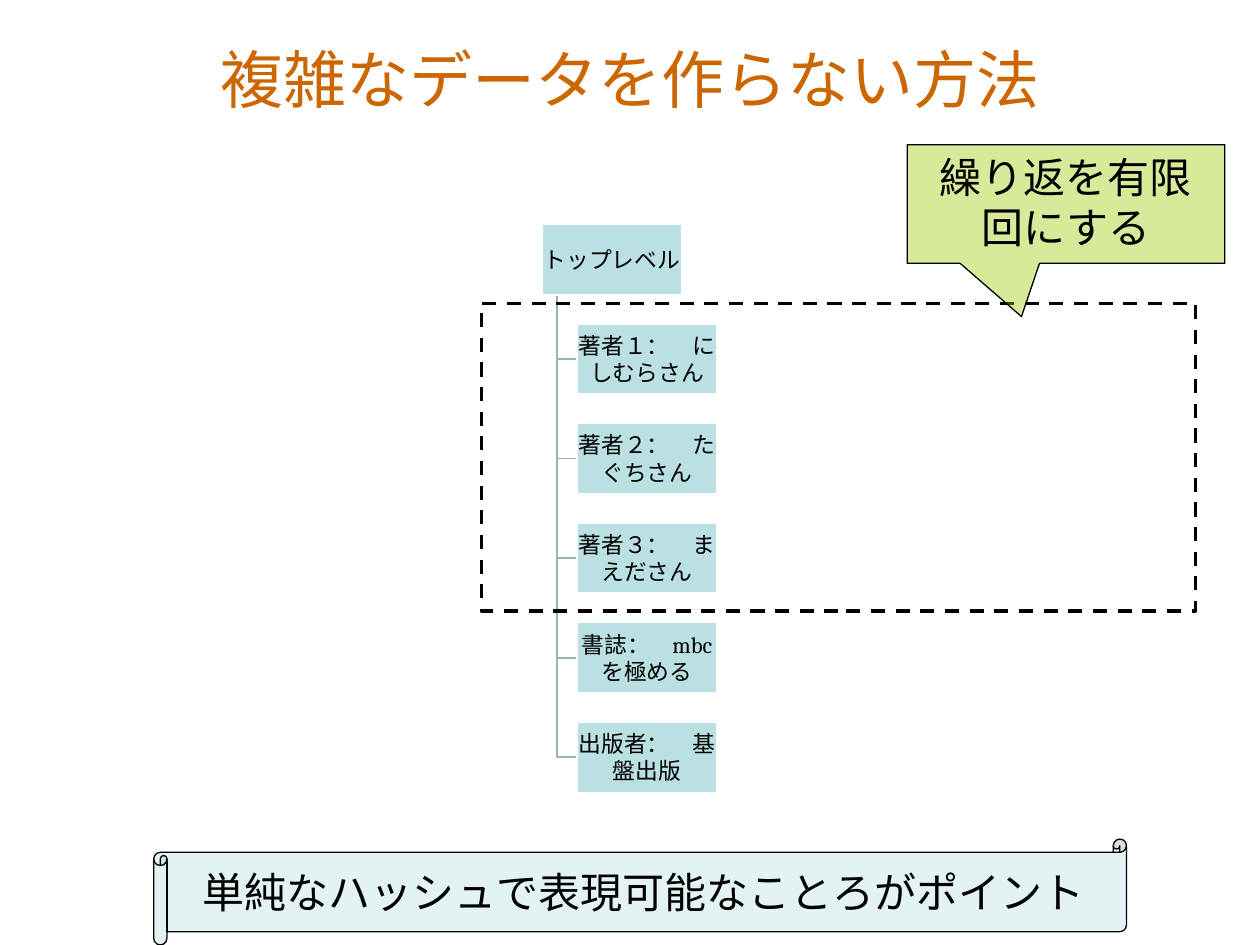
from pptx import Presentation
from pptx.dml.color import RGBColor
from pptx.enum.dml import MSO_LINE
from pptx.enum.shapes import MSO_SHAPE
from pptx.enum.text import MSO_ANCHOR, PP_ALIGN
from pptx.oxml.ns import qn
from pptx.util import Inches, Pt
from lxml import etree

BLACK = RGBColor(0x00, 0x00, 0x00)
WHITE = RGBColor(0xFF, 0xFF, 0xFF)
ORANGE = RGBColor(0xCC, 0x66, 0x00)
AQUA = RGBColor(0xBB, 0xE0, 0xE3)
TEAL = RGBColor(0x96, 0xB3, 0xB6)
LIME = RGBColor(0x99, 0xCC, 0x00)

ROOT = "トップレベル"
CHILDREN = [
    "著者１：　にしむらさん",
    "著者２：　たぐちさん",
    "著者３：　まえださん",
    "書誌：　mbcを極める",
    "出版者：　基盤出版",
]
NODE_WIDTH, NODE_HEIGHT = 1.11, 0.56
NODE_PITCH = 0.79
TRUNK_OFFSET, CHILD_INDENT = 0.12, 0.28


def write_text(shape, text, size, color=BLACK, font="Cambria", anchor=MSO_ANCHOR.MIDDLE):
    frame = shape.text_frame
    frame.text = text
    frame.word_wrap = True
    frame.vertical_anchor = anchor
    paragraph = frame.paragraphs[0]
    paragraph.alignment = PP_ALIGN.CENTER
    paragraph.font.size = Pt(size)
    paragraph.font.name = font
    paragraph.font.color.rgb = color


def add_box(slide, kind, box, fill, line, line_width, opacity=None):
    """Add a preset shape; opacity is a percentage, and a fill of None is empty."""
    shape = slide.shapes.add_shape(kind, *map(Inches, box))
    shape.shadow.inherit = False
    shape.line.color.rgb = line
    shape.line.width = Pt(line_width)
    if fill is None:
        shape.fill.background()
    else:
        shape.fill.solid()
        shape.fill.fore_color.rgb = fill
    if opacity is not None:
        color = shape.fill._xPr.find(qn("a:solidFill"))[0]
        etree.SubElement(color, qn("a:alpha")).set("val", str(opacity * 1000))
    return shape


def add_title(slide, box, text):
    title = slide.shapes.title
    title.left, title.top, title.width, title.height = map(Inches, box)
    write_text(title, text, 36, ORANGE, "Arial")


def add_branch(slide, trunk_x, top, child_x, child_y):
    builder = slide.shapes.build_freeform(Inches(trunk_x), Inches(top))
    corners = [(trunk_x, child_y), (child_x, child_y)]
    builder.add_line_segments([(Inches(x), Inches(y)) for x, y in corners], close=False)
    branch = builder.convert_to_shape()
    branch.shadow.inherit = False
    branch.fill.background()
    branch.line.color.rgb = TEAL
    branch.line.width = Pt(1)


def add_node(slide, left, top, text):
    node = add_box(slide, MSO_SHAPE.RECTANGLE, (left, top, NODE_WIDTH, NODE_HEIGHT), AQUA, WHITE, 1)
    write_text(node, text, 13)
    frame = node.text_frame
    frame.margin_left = frame.margin_right = Inches(0.01)
    frame.margin_top = frame.margin_bottom = Inches(0.01)


def add_tree(slide, left, top):
    child_left = left + CHILD_INDENT
    child_tops = [top + NODE_PITCH * row for row in range(1, len(CHILDREN) + 1)]
    for child_top in reversed(child_tops):
        add_branch(slide, left + TRUNK_OFFSET, top + NODE_HEIGHT,
                   child_left, child_top + NODE_HEIGHT / 2)
    add_node(slide, left, top, ROOT)
    for child_top, text in zip(child_tops, CHILDREN):
        add_node(slide, child_left, child_top, text)


def add_scroll(slide, box, text):
    scroll = add_box(slide, MSO_SHAPE.HORIZONTAL_SCROLL, box, AQUA, BLACK, 0.75, opacity=40)
    write_text(scroll, text, 24)
    scroll.text_frame.word_wrap = False


def add_dashed_frame(slide, box):
    frame = add_box(slide, MSO_SHAPE.RECTANGLE, box, None, BLACK, 2)
    frame.line.dash_style = MSO_LINE.DASH


def add_callout(slide, box, text):
    callout = add_box(slide, MSO_SHAPE.RECTANGULAR_CALLOUT, box, LIME, BLACK, 0.75, opacity=40)
    callout.adjustments[0] = -0.14
    callout.adjustments[1] = 0.95
    write_text(callout, text, 24, anchor=MSO_ANCHOR.TOP)


def main():
    presentation = Presentation()
    presentation.slide_width = Inches(10)
    presentation.slide_height = Inches(7.5)
    slide = presentation.slides.add_slide(presentation.slide_layouts[5])
    add_title(slide, (0.75, 0, 8.5, 1.25), "複雑なデータを作らない方法")
    add_tree(slide, 4.3, 1.78)
    add_scroll(slide, (1.22, 6.66, 7.72, 0.84), "単純なハッシュで表現可能なことろがポイント")
    add_dashed_frame(slide, (3.82, 2.41, 5.67, 2.44))
    add_callout(slide, (7.2, 1.15, 2.52, 0.94), "繰り返を有限回にする")
    presentation.save("out.pptx")


if __name__ == "__main__":
    main()
